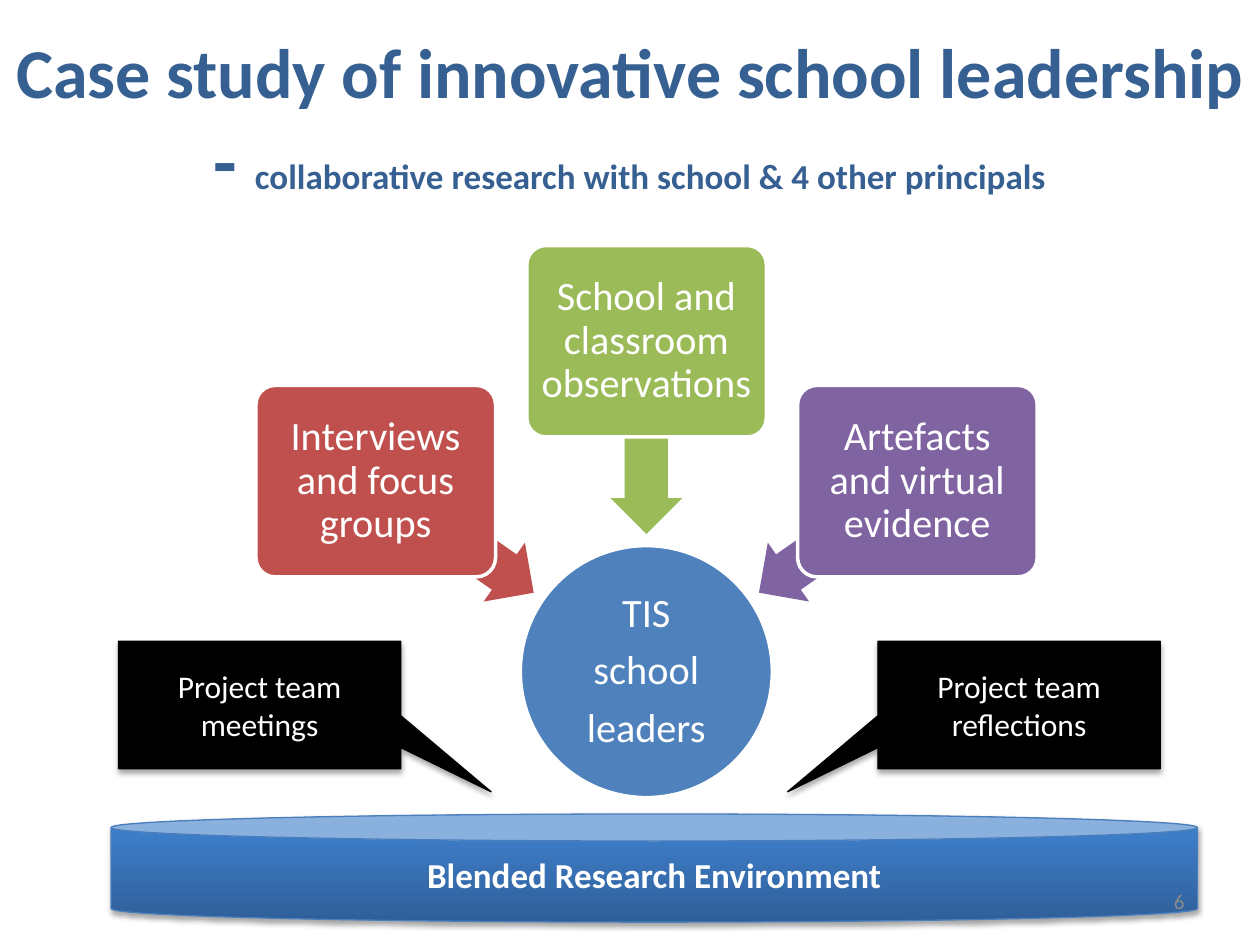
"""Build the slide on a case study of innovative school leadership."""
import pptx
import pptx.util
import pptx.dml.color
import pptx.enum.shapes
import pptx.enum.text
import lxml.etree

Cm, Pt = pptx.util.Cm, pptx.util.Pt
rgb = pptx.dml.color.RGBColor.from_string
kinds = pptx.enum.shapes.MSO_SHAPE
align = pptx.enum.text.PP_ALIGN
middle = pptx.enum.text.MSO_ANCHOR.MIDDLE
hues = {
    "title": "376092", "white": "FFFFFF", "black": "000000", "grey": "8C8C8C",
    "blue": "4F81BD", "red": "C0504D", "green": "9BBB59", "purple": "8064A2",
    "dark": "2F5F99", "light": "3D7CC7", "edge": "4B7EBC",
}


def write(shape, lines, size, hue="white", side=align.CENTER, bold=False, gap=None, inset=None):
    """Fill a shape with paragraphs of one style."""
    frame = shape.text_frame
    frame.text = "\n".join(lines)
    frame.word_wrap = True
    frame.vertical_anchor = middle
    if inset is not None:
        frame.margin_left = frame.margin_right = Cm(inset)
        frame.margin_top = frame.margin_bottom = Cm(inset)
    for para in frame.paragraphs:
        para.alignment = side
        if gap:
            para.line_spacing = 0.9
            para.space_after = Pt(gap)
        para.font.name = "Calibri"
        para.font.size = Pt(size)
        para.font.bold = bold
        para.font.color.rgb = rgb(hues[hue])


def draw(kind, left, top, width, height, fill=None, line=None, weight=0.75, shade=False):
    """Add a preset shape, with a soft shadow if asked."""
    shape = slide.shapes.add_shape(kind, Cm(left), Cm(top), Cm(width), Cm(height))
    shape.shadow.inherit = False
    if fill:
        shape.fill.solid()
        shape.fill.fore_color.rgb = rgb(hues[fill])
    if line:
        shape.line.color.rgb = rgb(hues[line])
        shape.line.width = Pt(weight)
    else:
        shape.line.fill.background()
    if shade:
        space = "{http://schemas.openxmlformats.org/drawingml/2006/main}"
        effect = shape._element.spPr.find(space + "effectLst")
        outer = lxml.etree.SubElement(effect, space + "outerShdw", blurRad="40000",
                                      dist="23000", dir="5400000", rotWithShape="0")
        color = lxml.etree.SubElement(outer, space + "srgbClr", val=hues["black"])
        lxml.etree.SubElement(color, space + "alpha", val="35000")
    return shape


deck = pptx.Presentation()
deck.slide_width, deck.slide_height = Cm(25.4), Cm(19.05)
slide = deck.slides.add_slide(deck.slide_layouts[5])

title = slide.shapes.title
title.left, title.top, title.width, title.height = Cm(0), Cm(0.76), Cm(25.4), Cm(3.18)
title.text_frame.auto_size = pptx.enum.text.MSO_AUTO_SIZE.NONE
title.text_frame.vertical_anchor = middle
head = title.text_frame.paragraphs[0]
head.alignment = align.CENTER
head.font.name = "Calibri"
head.font.bold = True
head.font.color.rgb = rgb(hues["title"])
for text, size in [
    ("Case study of innovative school leadership", 40),
    ("- ", 44),
    ("collaborative research with school & 4 other principals", 20),
]:
    run = head.add_run()
    run.text = text
    run.font.size = Pt(size)
    if size == 40:
        head.add_line_break()

hub = draw(kinds.OVAL, 10.49, 11, 5.08, 5.08, "blue", "white", 2)
write(hub, ["TIS", "school", "leaders"], 23, gap=8, inset=0.05)

mid = 13.03
for step, top, drop, turn, fill, text in [
    (-1, 7.77, 10.11, 215, "red", "Interviews and focus groups"),
    (0, 4.95, 8.1, 270, "green", "School and classroom observations"),
    (1, 7.77, 10.11, 325, "purple", "Artefacts and virtual evidence"),
]:
    arrow = draw(kinds.LEFT_ARROW, mid + step * 3.86 - 1.94, drop, 3.88, 1.45, fill)
    arrow.adjustments[0], arrow.adjustments[1] = 0.6, 0.5
    arrow.rotation = turn
    box = draw(kinds.ROUNDED_RECTANGLE, mid + step * 5.46 - 2.41, top, 4.83, 3.86, fill, "white", 2)
    box.adjustments[0] = 0.1
    write(box, [text], 23, gap=8, inset=0.12)

base = draw(kinds.CAN, 2.24, 16.41, 21.9, 2.18, line="edge", shade=True)
base.fill.gradient()
base.fill.gradient_angle = 90
for stop, hue, place in zip(base.fill.gradient_stops, ["dark", "light"], [0, 0.8]):
    stop.color.rgb = rgb(hues[hue])
    stop.position = place
write(base, ["Blended Research Environment"], 20, bold=True)

for left, tip, text in [
    (2.39, 0.82, "Project team meetings"),
    (17.7, -0.82, "Project team reflections"),
]:
    note = draw(kinds.RECTANGULAR_CALLOUT, left, 12.93, 5.69, 2.57, "black", "black", shade=True)
    note.adjustments[0], note.adjustments[1] = tip, 0.68
    write(note, [text], 18)

page = slide.shapes.add_textbox(Cm(18.21), Cm(17.65), Cm(5.92), Cm(1.02))
write(page, ["6"], 12, "grey", align.RIGHT)

deck.save("out.pptx")
